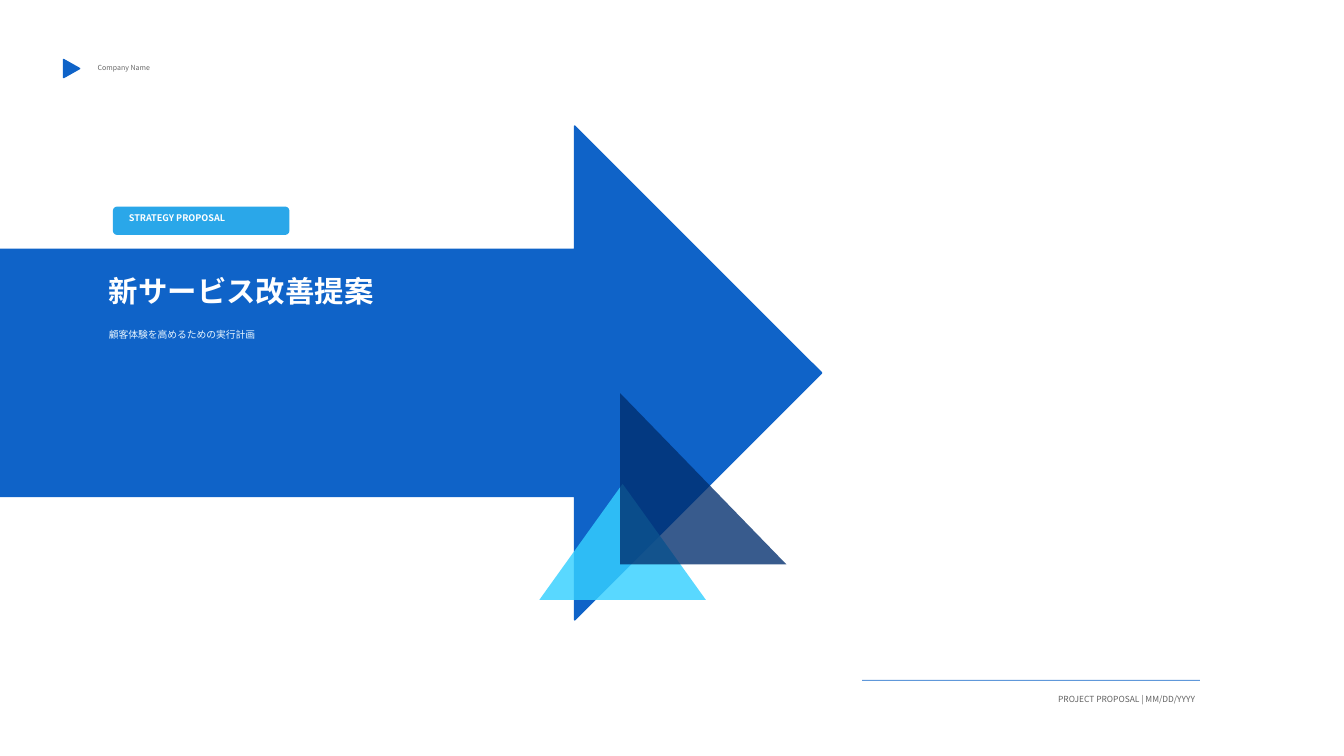
from lxml import etree
from pptx import Presentation
from pptx.dml.color import RGBColor
from pptx.enum.shapes import MSO_CONNECTOR, MSO_SHAPE
from pptx.enum.text import MSO_ANCHOR, MSO_AUTO_SIZE, PP_ALIGN
from pptx.oxml.ns import qn
from pptx.util import Inches, Pt

ARROW, TRIANGLE = MSO_SHAPE.RIGHT_ARROW, MSO_SHAPE.ISOSCELES_TRIANGLE
RIGHT_TRIANGLE, ROUNDED = MSO_SHAPE.RIGHT_TRIANGLE, MSO_SHAPE.ROUNDED_RECTANGLE
LEFT, RIGHT = PP_ALIGN.LEFT, PP_ALIGN.RIGHT
FONT = "Noto Sans CJK JP"
COLORS = {
    "blue": "0F63C8", "navy": "002E6E", "cyan": "35D0FF", "sky": "2AA7E9",
    "white": "FFFFFF", "ice": "E9F6FF", "gray": "666666", "footer": "606060",
}


def set_opacity(item, percent):
    """Make the first colour set on a shape or connector translucent."""
    color = next(item.element.spPr.iter(qn("a:srgbClr")))
    etree.SubElement(color, qn("a:alpha")).set("val", str(percent * 1000))


def write_text(box, place, text, size, color, bold=False, align=LEFT, inset=True):
    """Place a text box or placeholder and fill it with one formatted line."""
    box.left, box.top, box.width, box.height = [Inches(value) for value in place]
    frame = box.text_frame
    frame.text = text
    frame.word_wrap = True
    frame.auto_size = MSO_AUTO_SIZE.NONE
    frame.vertical_anchor = MSO_ANCHOR.MIDDLE
    frame.margin_left = frame.margin_right = Inches(0.1 if inset else 0)
    frame.margin_top = frame.margin_bottom = Inches(0.05 if inset else 0)
    para = frame.paragraphs[0]
    para.alignment = align
    para.space_before = Pt(0)
    span = para.runs[0]
    span.font.size = Pt(size)
    span.font.bold = bold
    span.font.name = FONT
    span.font.color.rgb = RGBColor.from_string(COLORS[color])
    east_asian = etree.SubElement(span.font._element, qn("a:ea"))
    east_asian.set("typeface", FONT)


deck = Presentation()
deck.slide_width, deck.slide_height = Inches(13.33), Inches(7.5)
slide = deck.slides.add_slide(deck.slide_layouts[0])
shapes = slide.shapes
title, subtitle = shapes.title, slide.placeholders[1]

# Arrow, accents, logo mark and tag: kind, place, colour, opacity, outlined, rotation
figures = [
    (ARROW, (-0.35, 1.25, 8.5, 4.9), "blue", 100, True, 0),
    (TRIANGLE, (5.35, 4.8, 1.65, 1.15), "cyan", 82, False, 0),
    (RIGHT_TRIANGLE, (6.15, 3.9, 1.65, 1.7), "navy", 78, False, 0),
    (TRIANGLE, (0.62, 0.6, 0.18, 0.16), "blue", 100, True, 90),
    (ROUNDED, (1.12, 2.05, 1.75, 0.28), "sky", 100, False, 0),
]
for kind, place, color, opacity, outlined, rotation in figures:
    figure = shapes.add_shape(kind, *[Inches(value) for value in place])
    figure.shadow.inherit = False
    figure.rotation = rotation
    figure.fill.solid()
    figure.fill.fore_color.rgb = RGBColor.from_string(COLORS[color])
    if opacity < 100:
        set_opacity(figure, opacity)
    if outlined:
        figure.line.color.rgb = RGBColor.from_string(COLORS[color])
        figure.line.width = Pt(1)
    else:
        figure.line.fill.background()
    if kind == ROUNDED:
        figure.adjustments[0] = 0.14

# Title and subtitle sit in front of the arrow
for placeholder in (title, subtitle):
    placeholder.element.getparent().append(placeholder.element)
write_text(title, (1.08, 2.66, 4.95, 0.45), "新サービス改善提案", 21, "white",
           bold=True, inset=False)
write_text(subtitle, (1.08, 3.21, 4.95, 0.22), "顧客体験を高めるための実行計画", 7, "ice",
           inset=False)

labels = [
    ((0.87, 0.58, 1.4, 0.18), "Company Name", 5, "gray", False, LEFT),
    ((1.18, 2.1, 1.63, 0.12), "STRATEGY PROPOSAL", 6.5, "white", True, LEFT),
    ((8.85, 6.85, 3.1, 0.18), "PROJECT PROPOSAL | MM/DD/YYYY", 6, "footer", False, RIGHT),
]
for place, text, size, color, bold, align in labels:
    box = shapes.add_textbox(0, 0, 0, 0)
    write_text(box, place, text, size, color, bold, align)

footer_rule = shapes.add_connector(
    MSO_CONNECTOR.STRAIGHT, Inches(8.55), Inches(6.75), Inches(11.9), Inches(6.75))
footer_rule.line.color.rgb = RGBColor.from_string(COLORS["blue"])
footer_rule.line.width = Pt(0.8)
set_opacity(footer_rule, 65)
etree.SubElement(footer_rule.element.spPr, qn("a:effectLst"))

deck.save("out.pptx")
